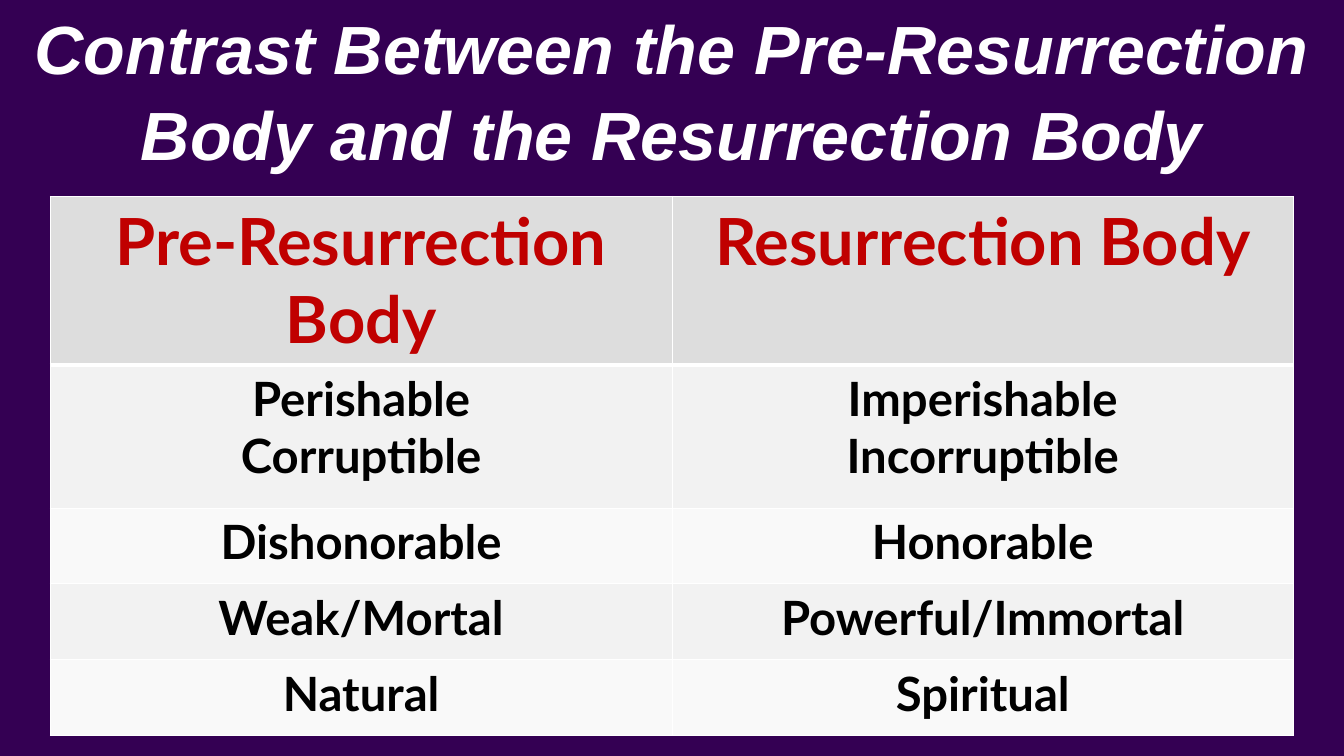
"""Build the slide contrasting the pre-resurrection and resurrection bodies."""
import pptx
import pptx.dml.color
import pptx.enum.text
import pptx.oxml
import pptx.oxml.ns
import pptx.util

Inches = pptx.util.Inches
Pt = pptx.util.Pt
CENTER = pptx.enum.text.PP_ALIGN.CENTER


def set_color(target, value):
    if hasattr(target, "solid"):
        target.solid()
        target = target.fore_color
    else:
        target = target.color
    target.rgb = pptx.dml.color.RGBColor.from_string(value)


def add_border(cell, side, width):
    ln = pptx.oxml.parse_xml(
        f'<a:{side} {pptx.oxml.ns.nsdecls("a")} w="{Pt(width)}">'
        '<a:solidFill><a:srgbClr val="FFFFFF"/></a:solidFill>'
        f'</a:{side}>'
    )
    cell._tc.get_or_add_tcPr().append(ln)


prs = pptx.Presentation()
prs.slide_width = Inches(18.96)
prs.slide_height = Inches(10.67)
s = prs.slides.add_slide(prs.slide_layouts[6])
set_color(s.background.fill, "340053")

rows = [
    ("Pre-Resurrection Body", "Resurrection Body"),
    ("Perishable\nCorruptible", "Imperishable\nIncorruptible"),
    ("Dishonorable", "Honorable"),
    ("Weak/Mortal", "Powerful/Immortal"),
    ("Natural", "Spiritual"),
]
heights = [2.38, 2.02, 1.07, 1.07, 1.07]
fills = ["DDDDDD", "F2F2F2", "F9F9F9", "F2F2F2", "F9F9F9"]

table = s.shapes.add_table(
    len(rows), 2, Inches(0.71), Inches(2.77), Inches(17.54), Inches(sum(heights))
).table
for i, texts in enumerate(rows):
    table.rows[i].height = Inches(heights[i])
    for j, text in enumerate(texts):
        cell = table.cell(i, j)
        cell.margin_left = cell.margin_right = Inches(0.07)
        cell.margin_top = cell.margin_bottom = Inches(0.07)
        add_border(cell, "lnL", 1)
        add_border(cell, "lnR", 1)
        add_border(cell, "lnT", 4 if i == 1 else 1)
        add_border(cell, "lnB", 4 if i == 0 else 1)
        set_color(cell.fill, fills[i])
        cell.text_frame.text = text
        for p in cell.text_frame.paragraphs:
            p.alignment = CENTER
            font = p.runs[0].font
            font.name = "Lato"
            font.size = Pt(66 if i == 0 else 48)
            font.bold = True
            set_color(font, "C00000" if i == 0 else "000000")

title = s.shapes.add_textbox(Inches(0.22), 0, Inches(18.52), Inches(2.48))
tf = title.text_frame
tf.word_wrap = True
tf.auto_size = pptx.enum.text.MSO_AUTO_SIZE.SHAPE_TO_FIT_TEXT
tf.vertical_anchor = pptx.enum.text.MSO_ANCHOR.MIDDLE
tf.margin_left = tf.margin_right = tf.margin_top = tf.margin_bottom = Inches(0.07)
tf.text = "Contrast Between the Pre-Resurrection Body and the Resurrection Body"
p = tf.paragraphs[0]
p.alignment = CENTER
p.line_spacing = 1.05
font = p.runs[0].font
font.name = "Arial"
font.size = Pt(69.3)
font.bold = font.italic = True
set_color(font, "FFFFFF")

prs.save("out.pptx")
